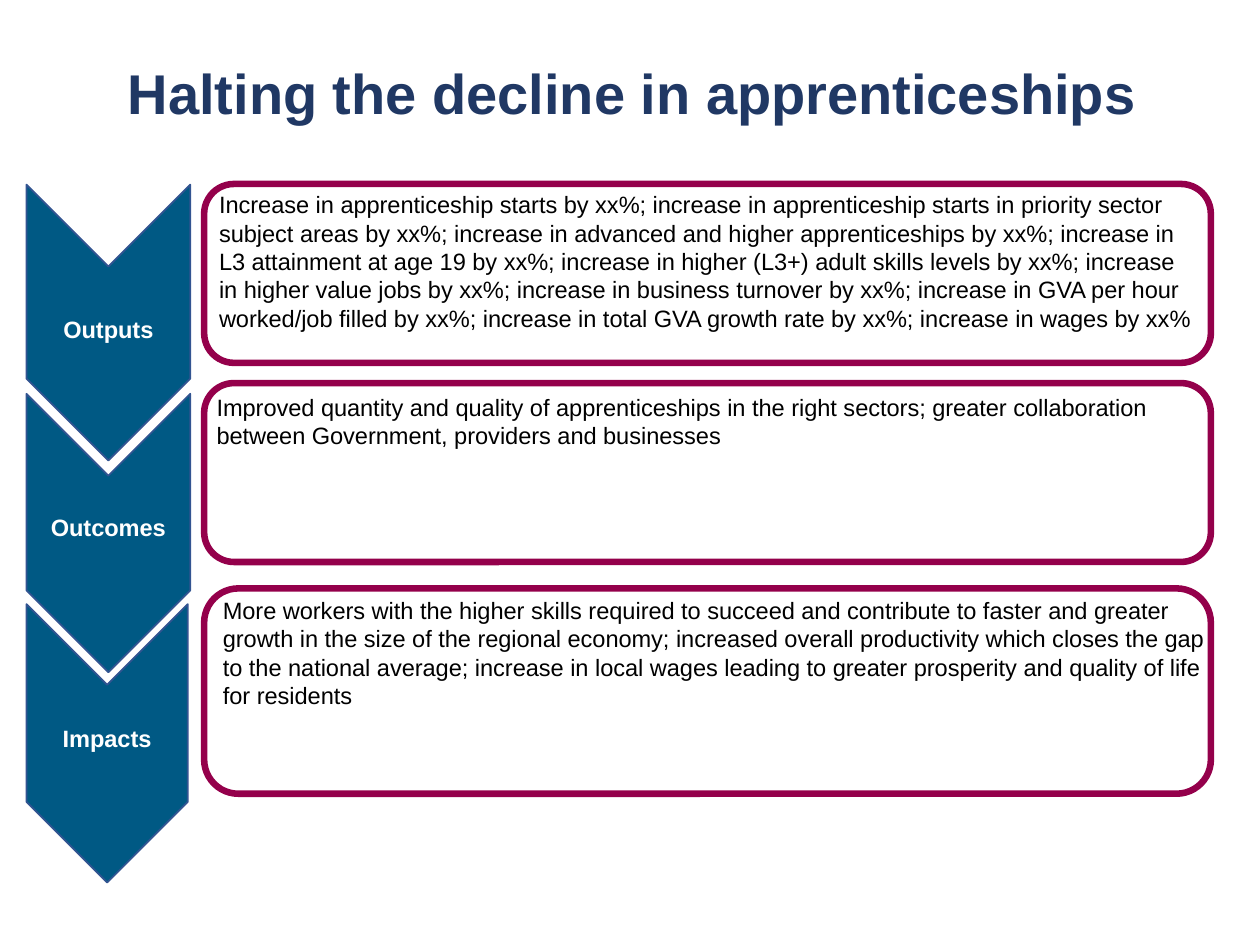
from dataclasses import dataclass

from pptx import Presentation
from pptx.dml.color import RGBColor
from pptx.enum.shapes import MSO_SHAPE
from pptx.enum.text import MSO_ANCHOR, PP_ALIGN
from pptx.util import Inches, Pt

ROUND = MSO_SHAPE.ROUNDED_RECTANGLE
CHEVRON = MSO_SHAPE.CHEVRON
TOP, MIDDLE = MSO_ANCHOR.TOP, MSO_ANCHOR.MIDDLE
LEFT, CENTER = PP_ALIGN.LEFT, PP_ALIGN.CENTER

COLORS = {
    "white": "FFFFFF",
    "black": "000000",
    "navy": "203864",
    "plum": "94004B",
    "teal": "005984",
    "edge": "325491",
}

BOX_LEFT, BOX_WIDTH = 1.62, 7.99
ARROW_LEFT, ARROW_TOP, ARROW_STEP = 0.21, 2.56, 1.67
LABEL_WIDTH, LABEL_HEIGHT = 1.17, 0.33


@dataclass
class Stage:
    label: str
    body: str
    top: float
    height: float
    text_at: tuple[float, float, float, float]
    label_top: float
    length: float
    width: float


STAGES = [
    Stage(
        "Outputs",
        "Increase in apprenticeship starts by xx%; increase in apprenticeship "
        "starts in priority sector subject areas by xx%; increase in advanced "
        "and higher apprenticeships by xx%; increase in L3 attainment at age 19 "
        "by xx%; increase in higher (L3+) adult skills levels by xx%; increase "
        "in higher value jobs by xx%; increase in business turnover by xx%; "
        "increase in GVA per hour worked/job filled by xx%; increase in total "
        "GVA growth rate by xx%; increase in wages by xx%",
        1.46, 1.42, (1.64, 1.46, 7.97, 1.66), 2.45, 2.19, 1.3,
    ),
    Stage(
        "Outcomes",
        "Improved quantity and quality of apprenticeships in the right sectors; "
        "greater collaboration between Government, providers and businesses",
        3.04, 1.42, (1.62, 3.07, 7.99, 0.63), 4.02, 2.21, 1.3,
    ),
    Stage(
        "Impacts",
        "More workers with the higher skills required to succeed and contribute "
        "to faster and greater growth in the size of the regional economy; "
        "increased overall productivity which closes the gap to the national "
        "average; increase in local wages leading to greater prosperity and "
        "quality of life for residents",
        4.67, 1.63, (1.67, 4.68, 7.99, 1.14), 5.7, 2.21, 1.28,
    ),
]


def color(name: str) -> RGBColor:
    return RGBColor.from_string(COLORS[name])


def style(para, size: float, tint: str, bold: bool, align) -> None:
    para.alignment = align
    font = para.font
    font.name, font.size, font.bold = "Arial", Pt(size), bold
    font.color.rgb = color(tint)


def add_shape(slide, kind, at: tuple, fill: str, line: str, weight: float):
    shape = slide.shapes.add_shape(kind, *map(Inches, at))
    shape.shadow.inherit = False
    shape.fill.solid()
    shape.fill.fore_color.rgb = color(fill)
    shape.line.color.rgb = color(line)
    shape.line.width = Pt(weight)
    return shape


def add_text(slide, text: str, at: tuple, tint: str, bold: bool, align) -> None:
    frame = slide.shapes.add_textbox(*map(Inches, at)).text_frame
    frame.word_wrap = True
    frame.vertical_anchor = TOP
    frame.text = text
    style(frame.paragraphs[0], 13.5, tint, bold, align)


def add_title(slide, text: str) -> None:
    title = slide.shapes.title
    title.left, title.top = Inches(0.89), Inches(0.41)
    title.width, title.height = Inches(8.26), Inches(0.64)
    frame = title.text_frame
    frame.text = text
    frame.word_wrap = False
    frame.vertical_anchor = MIDDLE
    style(frame.paragraphs[0], 32, "navy", True, CENTER)


def add_stage(slide, stage: Stage, mid: float) -> None:
    box = (BOX_LEFT, stage.top, BOX_WIDTH, stage.height)
    add_shape(slide, ROUND, box, "white", "plum", 3.75)
    add_text(slide, stage.body, stage.text_at, "black", False, LEFT)

    center = ARROW_LEFT + stage.width / 2
    arrow = (center - stage.length / 2, mid - stage.width / 2,
             stage.length, stage.width)
    add_shape(slide, CHEVRON, arrow, "teal", "edge", 1).rotation = 90
    label = (center - LABEL_WIDTH / 2, stage.label_top,
             LABEL_WIDTH, LABEL_HEIGHT)
    add_text(slide, stage.label, label, "white", True, CENTER)


def main() -> None:
    deck = Presentation()
    deck.slide_width, deck.slide_height = Inches(10), Inches(7.5)
    slide = deck.slides.add_slide(deck.slide_layouts[5])
    add_title(slide, "Halting the decline in apprenticeships")
    for row, stage in enumerate(STAGES):
        add_stage(slide, stage, ARROW_TOP + row * ARROW_STEP)
    deck.save("out.pptx")


if __name__ == "__main__":
    main()
